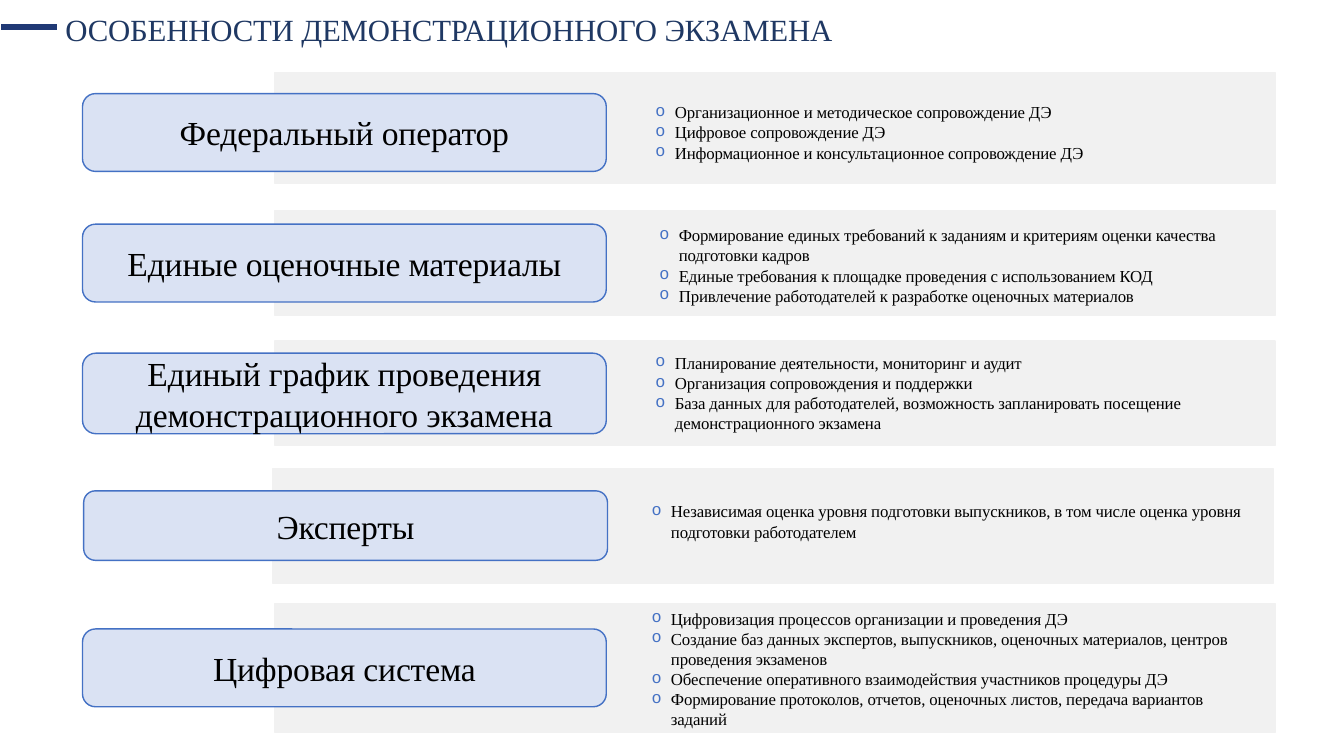
from lxml.etree import SubElement
from pptx import Presentation
from pptx.dml.color import RGBColor
from pptx.enum.shapes import MSO_CONNECTOR, MSO_SHAPE
from pptx.enum.text import MSO_ANCHOR, PP_ALIGN
from pptx.oxml.ns import qn
from pptx.util import Cm, Pt


class Theme:
    font = "Times New Roman"
    mark_font = "Courier New"
    navy = "1F3863"
    rule = "203975"
    blue = "4471C4"
    pale = "DAE2F3"
    gray = "F1F1F1"
    black = "000000"
    title = 22
    label = 24
    body = 12
    tight = -10  # letter spacing, hundredths of a point


class Page:
    def __init__(self, deck, theme):
        self.theme = theme
        self.slide = deck.slides.add_slide(deck.slide_layouts[6])

    def words(self, para, text, size, color):
        run = para.add_run()
        run.text = text
        run.font.name = self.theme.font
        run.font.size = Pt(size)
        run.font.color.rgb = RGBColor.from_string(color)
        run._r.get_or_add_rPr().set("spc", str(self.theme.tight))

    def shape(self, kind, left, top, width, height, fill, line):
        item = self.slide.shapes.add_shape(
            kind, Cm(left), Cm(top), Cm(width), Cm(height))
        item.shadow.inherit = False
        item.fill.solid()
        item.fill.fore_color.rgb = RGBColor.from_string(fill)
        item.line.color.rgb = RGBColor.from_string(line)
        item.line.width = Pt(1)
        return item

    def band(self, left, top, height):
        gray = self.theme.gray
        self.shape(MSO_SHAPE.RECTANGLE, left, top, 25.2, height, gray, gray)

    def label(self, left, top, height, text):
        item = self.shape(MSO_SHAPE.ROUNDED_RECTANGLE, left, top, 13.2,
                          height, self.theme.pale, self.theme.blue)
        frame = item.text_frame
        frame.word_wrap = True
        frame.margin_top = frame.margin_bottom = 0
        frame.vertical_anchor = MSO_ANCHOR.MIDDLE
        para = frame.paragraphs[0]
        para.alignment = PP_ALIGN.CENTER
        self.words(para, text, self.theme.label, self.theme.black)

    def box(self, left, top, width, height):
        frame = self.slide.shapes.add_textbox(
            Cm(left), Cm(top), Cm(width), Cm(height)).text_frame
        frame.word_wrap = True
        frame.margin_left = frame.margin_right = frame.margin_bottom = 0
        frame.margin_top = Cm(0.06)
        return frame

    def bullet(self, para):
        props = para._p.get_or_add_pPr()
        props.set("marL", str(Cm(0.5)))
        props.set("indent", str(Cm(-0.49)))
        tint = SubElement(props, qn("a:buClr"))
        SubElement(tint, qn("a:srgbClr")).set("val", self.theme.blue)
        SubElement(props, qn("a:buFont")).set("typeface", self.theme.mark_font)
        SubElement(props, qn("a:buChar")).set("char", "o")

    def points(self, left, top, width, height, lines):
        frame = self.box(left, top, width, height)
        for num, line in enumerate(lines):
            para = frame.add_paragraph() if num else frame.paragraphs[0]
            self.bullet(para)
            self.words(para, line, self.theme.body, self.theme.black)

    def title(self, text):
        para = self.box(1.65, 0.2, 20.5, 1).paragraphs[0]
        self.words(para, text, self.theme.title, self.theme.navy)

    def rule(self, left, right, top):
        line = self.slide.shapes.add_connector(
            MSO_CONNECTOR.STRAIGHT, Cm(left), Cm(top), Cm(right), Cm(top))
        line.line.color.rgb = RGBColor.from_string(self.theme.rule)
        line.line.width = Pt(4.5)
        SubElement(line._element.spPr, qn("a:effectLst"))


# Each row: band, label and list positions in cm, then the words
ROWS = [
    ((6.93, 1.83, 2.8), (2.08, 2.36, 1.96), (16.51, 2.51, 11.3, 1.6),
     "Федеральный оператор",
     ["Организационное и методическое сопровождение ДЭ",
      "Цифровое сопровождение ДЭ",
      "Информационное и консультационное сопровождение ДЭ"]),
    ((6.93, 5.31, 2.64), (2.08, 5.65, 1.96), (16.61, 5.61, 14.35, 2.1),
     "Единые оценочные материалы",
     ["Формирование единых требований к заданиям и критериям оценки "
      "качества подготовки кадров",
      "Единые требования к площадке проведения с использованием КОД",
      "Привлечение работодателей к разработке оценочных материалов"]),
    ((6.93, 8.59, 2.64), (2.08, 8.9, 2.03), (16.51, 8.82, 13.6, 2.1),
     "Единый график проведения демонстрационного экзамена",
     ["Планирование деятельности, мониторинг и аудит",
      "Организация сопровождения и поддержки",
      "База данных для работодателей, возможность запланировать "
      "посещение демонстрационного экзамена"]),
    ((6.88, 11.81, 2.9), (2.11, 12.37, 1.75), (16.41, 12.57, 15.2, 1.1),
     "Эксперты",
     ["Независимая оценка уровня подготовки выпускников, в том числе "
      "оценка уровня подготовки работодателем"]),
    ((6.93, 15.21, 3.25), (2.08, 15.85, 1.96), (16.41, 15.27, 14.9, 3.12),
     "Цифровая система",
     ["Цифровизация процессов организации и проведения ДЭ",
      "Создание баз данных экспертов, выпускников, оценочных материалов, "
      "центров проведения экзаменов",
      "Обеспечение оперативного взаимодействия участников процедуры ДЭ",
      "Формирование протоколов, отчетов, оценочных листов, передача "
      "вариантов заданий"]),
]


def main():
    deck = Presentation()
    deck.slide_width, deck.slide_height = Cm(33.87), Cm(19.05)
    page = Page(deck, Theme)

    # Heading
    page.rule(0.03, 1.43, 0.68)
    page.title("ОСОБЕННОСТИ ДЕМОНСТРАЦИОННОГО ЭКЗАМЕНА")

    # Rows
    for band, label, place, name, lines in ROWS:
        page.band(*band)
        page.label(*label, name)
        page.points(*place, lines)

    deck.save("out.pptx")


if __name__ == "__main__":
    main()
